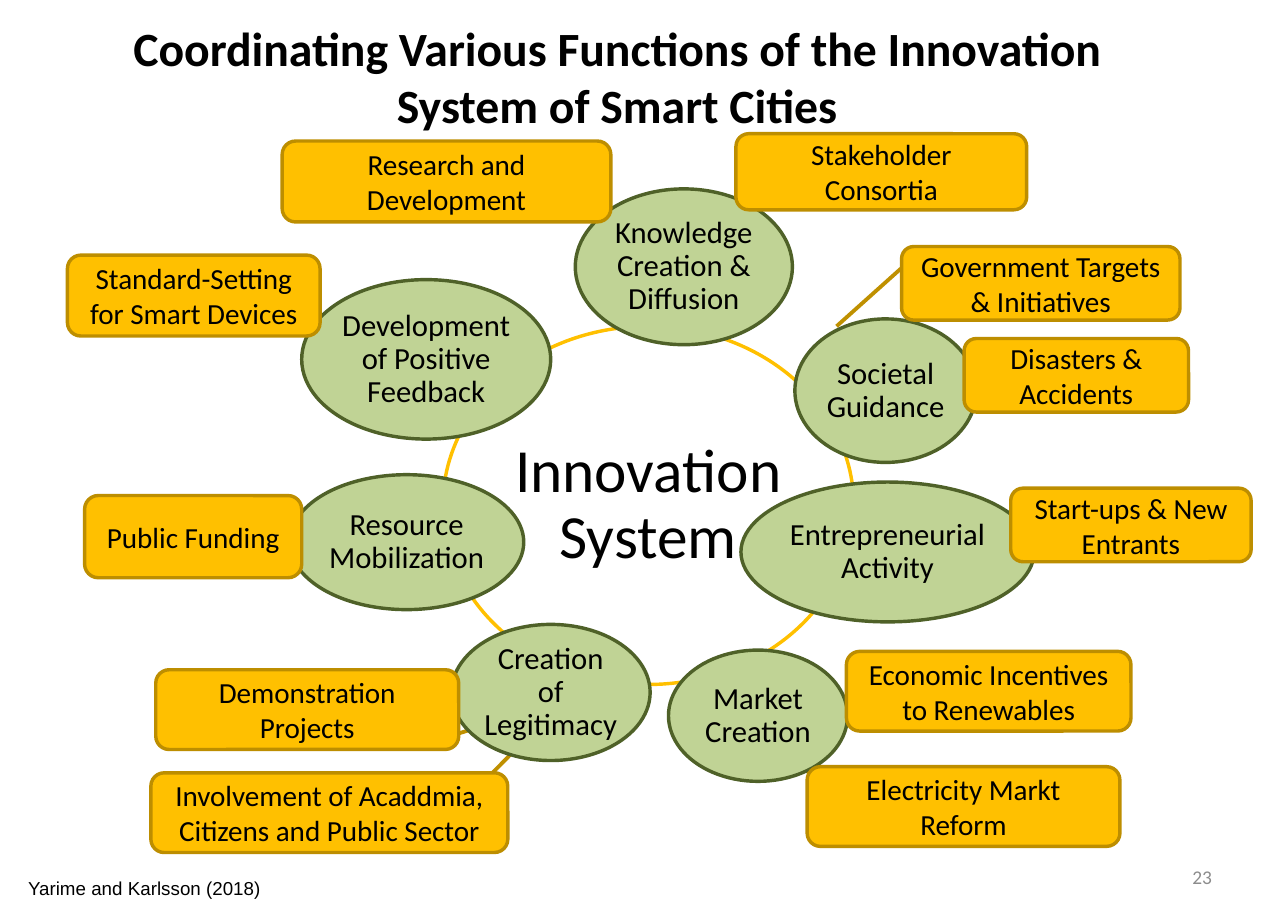
from dataclasses import dataclass

from lxml import etree
from pptx import Presentation
from pptx.dml.color import RGBColor
from pptx.enum.shapes import MSO_CONNECTOR, MSO_SHAPE
from pptx.enum.text import MSO_ANCHOR, MSO_AUTO_SIZE, PP_ALIGN
from pptx.oxml.ns import qn
from pptx.util import Emu, Inches, Pt

OVAL, ROUND = MSO_SHAPE.OVAL, MSO_SHAPE.ROUNDED_RECTANGLE
STRAIGHT = MSO_CONNECTOR.STRAIGHT
MIDDLE, TOP = MSO_ANCHOR.MIDDLE, MSO_ANCHOR.TOP
LEFT, CENTER, RIGHT = PP_ALIGN.LEFT, PP_ALIGN.CENTER, PP_ALIGN.RIGHT

COLS, ROWS = 105, 75
CELL = Inches(0.1)


@dataclass(frozen=True)
class Style:
    size: float
    font: str = "Calibri"
    ink: str = "000000"
    bold: bool = False
    align: int = CENTER
    anchor: int = MIDDLE
    inset: float = 0.1
    gap: float = 1.0


@dataclass(frozen=True)
class Look:
    form: int
    fill: str
    edge: str
    style: Style


@dataclass(frozen=True)
class Node:
    """Text and its left, top, width and height in grid cells."""
    text: str
    x: float
    y: float
    w: float
    h: float


@dataclass(frozen=True)
class Link:
    x: float
    y: float
    to_x: float
    to_y: float


TITLE = Style(28, bold=True)
NUMBER = Style(11.4, ink="8C8C8C", align=RIGHT)
SOURCE = Style(11, font="Arial", align=LEFT, anchor=TOP)
RING = Look(OVAL, "FFFFFF", "FFC000", Style(36, inset=0.05, gap=0.9))
ROLE = Look(OVAL, "C0D395", "4F6128", Style(18, inset=0.03, gap=0.9))
CASE = Look(ROUND, "FFC000", "BD8E00", Style(17.1))

HEAD = Node("Coordinating Various Functions of the Innovation System of Smart Cities",
            3.7, 1.9, 93.2, 8.6)
CORE = Node("Innovation System", 36.1, 26.6, 33.5, 29.2)
PAGE = Node("23", 75.3, 69.5, 24.5, 4)
CITE = Node("Yarime and Karlsson (2018)", 1.3, 71, 25.1, 2.9)

LINKS = [
    Link(41.4, 58.5, 34.6, 60.7),
    Link(43, 60.1, 38, 65.2),
    Link(32.8, 45.3, 26.1, 45.3),
    Link(36.4, 30, 28.9, 28.7),
    Link(38, 27.8, 33.7, 22.8),
    Link(75, 20.5, 68.2, 26.6),
    Link(68.2, 65.2, 63.7, 60.8),
]
ROLES = [
    Node("Knowledge Creation & Diffusion", 46.9, 15.4, 17.7, 12.7),
    Node("Societal Guidance", 64.8, 26, 14.8, 11.7),
    Node("Entrepreneurial Activity", 60.4, 39.3, 23.9, 11.4),
    Node("Market Creation", 54.5, 53, 14.6, 10.7),
    Node("Creation of Legitimacy", 36.8, 50.9, 16.2, 11.1),
    Node("Resource Mobilization", 23.6, 38.7, 19.1, 11),
    Node("Development of Positive Feedback", 24.6, 22.8, 20.3, 13),
]
CASES = [
    Node("Electricity Markt Reform", 65.8, 62.5, 25.5, 6.5),
    Node("Involvement of Acaddmia, Citizens and Public Sector", 12.3, 63, 29.1, 6.5),
    Node("Public Funding", 6.9, 40.4, 17.7, 6.7),
    Node("Stakeholder Consortia", 60, 10.9, 23.7, 6.2),
    Node("Government Targets & Initiatives", 73.5, 20.1, 22.7, 6),
    Node("Demonstration Projects", 12.7, 54.6, 24.7, 6.5),
    Node("Economic Incentives to Renewables", 69, 53.1, 23.2, 6.5),
    Node("Research and Development", 23, 11.5, 26.8, 6.6),
    Node("Start-ups & New Entrants", 82.4, 39.8, 19.6, 6),
    Node("Disasters & Accidents", 78.6, 27.6, 18.3, 6),
    Node("Standard-Setting for Smart Devices", 5.5, 20.8, 20.6, 6.6),
]


def cells(*counts: float) -> list[Emu]:
    return [Emu(round(n * CELL)) for n in counts]


def area(node: Node) -> list[Emu]:
    return cells(node.x, node.y, node.w, node.h)


def tint(color, value: str) -> None:
    color.rgb = RGBColor.from_string(value)


def assign(target, values: dict) -> None:
    for name, value in values.items():
        setattr(target, name, value)


def write(shape, text: str, style: Style) -> None:
    frame = shape.text_frame
    frame.text = text
    sides = ("left", "right", "top", "bottom")
    pads = {f"margin_{side}": Inches(style.inset) for side in sides}
    if style.inset == 0.1:
        pads |= {"margin_top": Inches(0.05), "margin_bottom": Inches(0.05)}
    assign(frame, pads | {"word_wrap": True, "auto_size": MSO_AUTO_SIZE.NONE,
                          "vertical_anchor": style.anchor})
    para = frame.paragraphs[0]
    assign(para, {"alignment": style.align, "line_spacing": style.gap})
    font = para.runs[0].font
    assign(font, {"name": style.font, "size": Pt(style.size), "bold": style.bold})
    tint(font.color, style.ink)


def draw_node(slide, node: Node, look: Look):
    shape = slide.shapes.add_shape(look.form, *area(node))
    shape.shadow.inherit = False
    shape.fill.solid()
    tint(shape.fill.fore_color, look.fill)
    tint(shape.line.color, look.edge)
    shape.line.width = Pt(2)
    write(shape, node.text, look.style)
    return shape


def draw_link(slide, link: Link) -> None:
    line = slide.shapes.add_connector(
        STRAIGHT, *cells(link.x, link.y, link.to_x, link.to_y))
    tint(line.line.color, "BF9000")
    line.line.width = Pt(2.25)
    etree.SubElement(line._element.spPr, qn("a:effectLst"))


def fade(shape, share: int) -> None:
    """Make the solid fill opaque to a share in percent."""
    color = shape._element.spPr.find(qn("a:solidFill"))[0]
    etree.SubElement(color, qn("a:alpha"), val=str(share * 1000))


def main() -> None:
    deck = Presentation()
    deck.slide_width, deck.slide_height = cells(COLS, ROWS)
    slide = deck.slides.add_slide(deck.slide_layouts[5])

    for link in LINKS:
        draw_link(slide, link)

    title = slide.shapes.title
    assign(title, dict(zip(("left", "top", "width", "height"), area(HEAD))))
    write(title, HEAD.text, TITLE)

    fade(draw_node(slide, CORE, RING), 50)
    for nodes, look in ((ROLES, ROLE), (CASES, CASE)):
        for node in nodes:
            draw_node(slide, node, look)

    for node, style in ((PAGE, NUMBER), (CITE, SOURCE)):
        write(slide.shapes.add_textbox(*area(node)), node.text, style)

    deck.save("out.pptx")


if __name__ == "__main__":
    main()
